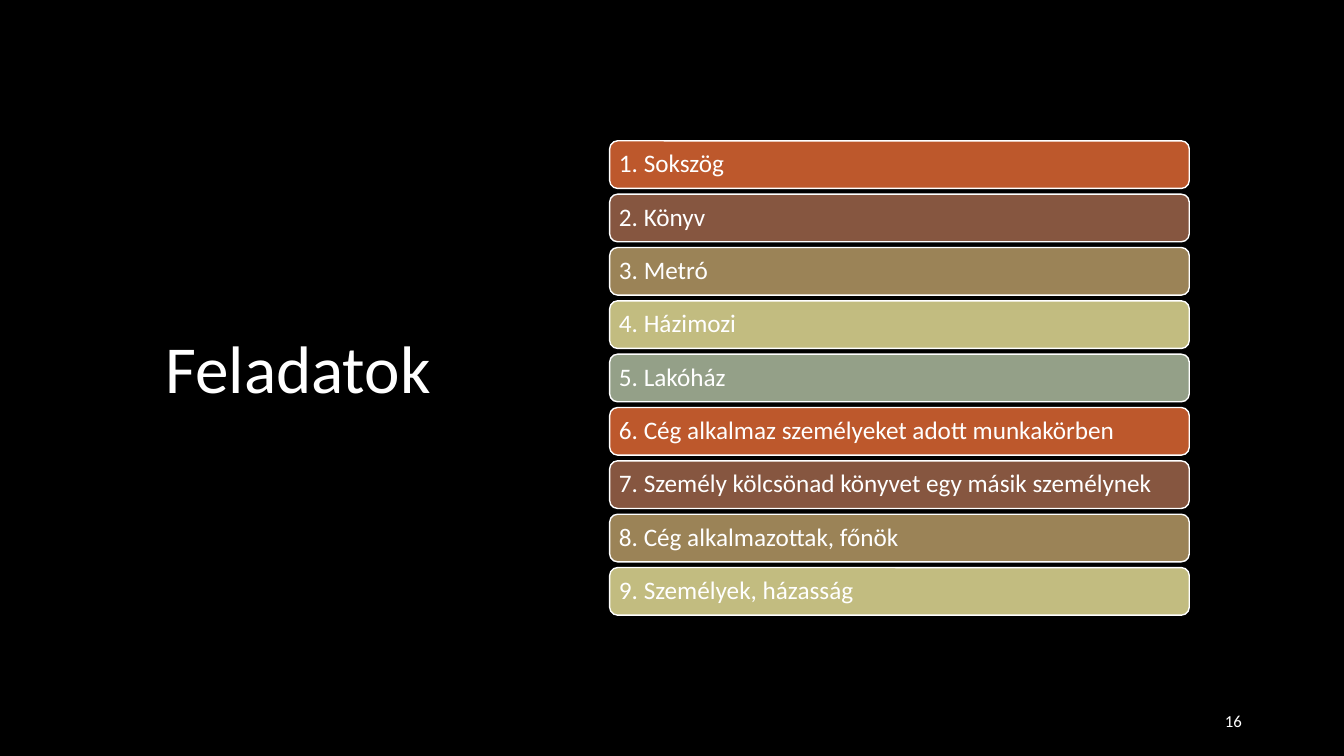
from dataclasses import dataclass

from pptx import Presentation
from pptx.dml.color import RGBColor
from pptx.enum.shapes import MSO_SHAPE
from pptx.enum.text import MSO_ANCHOR, MSO_AUTO_SIZE, PP_ALIGN
from pptx.util import Pt


@dataclass(frozen=True)
class Theme:
    """Colours, font and type sizes of the slide."""
    font: str = "Calibri"
    background: str = "000000"
    text: str = "FFFFFF"
    bars: tuple = ("BD582C", "865640", "9B8357", "C2BC80", "94A088")
    title_size: int = 48
    task_size: int = 18
    number_size: int = 12


THEME = Theme()
TASKS = (
    "Sokszög",
    "Könyv",
    "Metró",
    "Házimozi",
    "Lakóház",
    "Cég alkalmaz személyeket adott munkakörben",
    "Személy kölcsönad könyvet egy másik személynek",
    "Cég alkalmazottak, főnök",
    "Személyek, házasság",
)
BAR_LEFT, BAR_TOP, BAR_WIDTH, BAR_HEIGHT = 435.5, 100.6, 414, 34
BAR_PITCH = 38.1


def write_text(shape, text, size, alignment=PP_ALIGN.LEFT, line_spacing=0.9):
    """Put one vertically centred, formatted paragraph into a shape."""
    frame = shape.text_frame
    frame.text = text
    frame.word_wrap = True
    frame.auto_size = MSO_AUTO_SIZE.NONE
    frame.vertical_anchor = MSO_ANCHOR.MIDDLE
    paragraph = frame.paragraphs[0]
    paragraph.alignment = alignment
    paragraph.line_spacing = line_spacing
    for run in paragraph.runs:
        run.font.name = THEME.font
        run.font.size = Pt(size)
        run.font.color.rgb = RGBColor.from_string(THEME.text)


def add_title(slide, text):
    """Fill and place the title placeholder."""
    title = slide.shapes.title
    title.left, title.top = Pt(110.9), Pt(49)
    title.width, title.height = Pt(291.6), Pt(433.4)
    write_text(title, text, THEME.title_size)


def add_task_bar(slide, index, task):
    """Add one numbered task bar at its place in the column."""
    bar = slide.shapes.add_shape(
        MSO_SHAPE.ROUNDED_RECTANGLE,
        Pt(BAR_LEFT), Pt(BAR_TOP + index * BAR_PITCH),
        Pt(BAR_WIDTH), Pt(BAR_HEIGHT),
    )
    bar.shadow.inherit = False
    bar.fill.solid()
    bar.fill.fore_color.rgb = RGBColor.from_string(THEME.bars[index % len(THEME.bars)])
    bar.line.color.rgb = RGBColor.from_string(THEME.text)
    bar.line.width = Pt(1)
    frame = bar.text_frame
    frame.margin_left = frame.margin_right = Pt(5)
    frame.margin_top = frame.margin_bottom = Pt(5)
    write_text(bar, f"{index + 1}. {task}", THEME.task_size)


def add_slide_number(slide, number):
    """Add the slide number at the bottom right."""
    box = slide.shapes.add_textbox(Pt(678.2), Pt(500.4), Pt(216), Pt(28.8))
    write_text(box, str(number), THEME.number_size, PP_ALIGN.RIGHT, 1.0)


def main():
    """Build and save the presentation."""
    presentation = Presentation()
    presentation.slide_width, presentation.slide_height = Pt(960), Pt(540)
    slide = presentation.slides.add_slide(presentation.slide_layouts[5])
    slide.background.fill.solid()
    slide.background.fill.fore_color.rgb = RGBColor.from_string(THEME.background)
    add_title(slide, "Feladatok")
    for index, task in enumerate(TASKS):
        add_task_bar(slide, index, task)
    add_slide_number(slide, 16)
    presentation.save("out.pptx")


if __name__ == "__main__":
    main()
